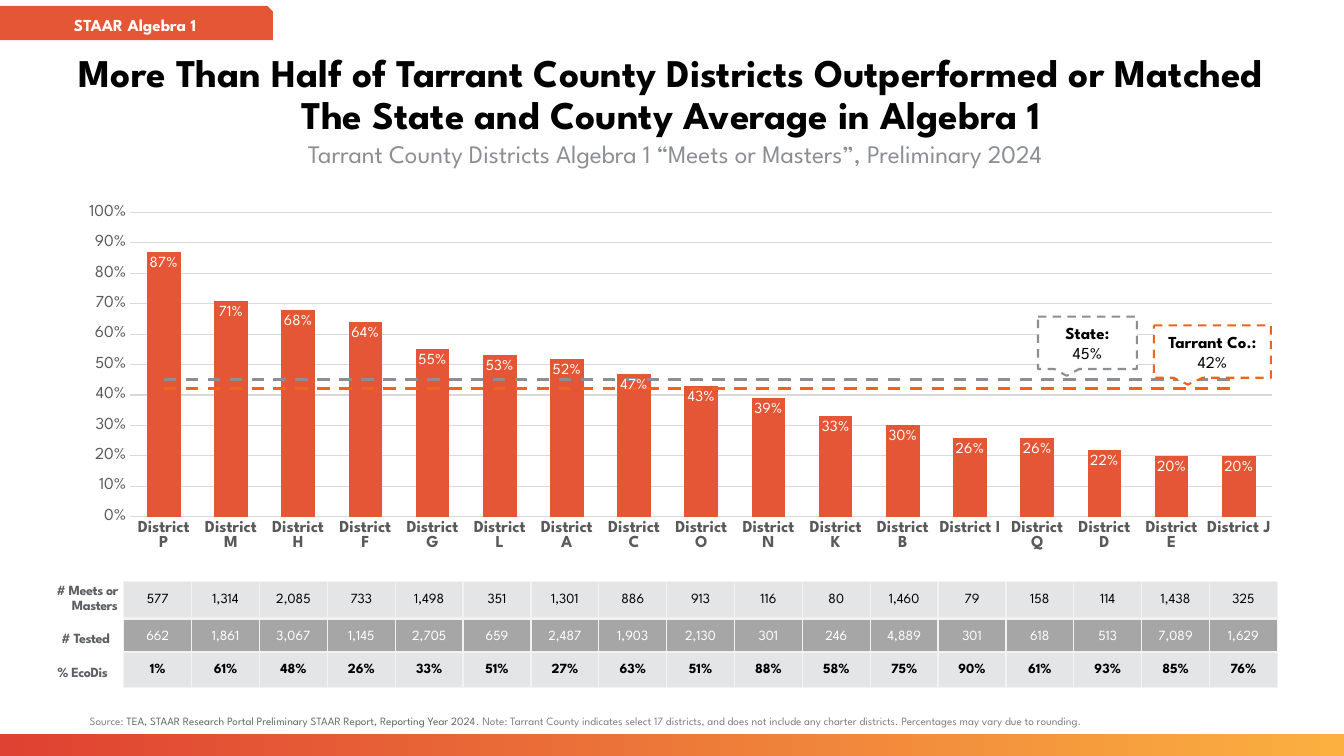
import pptx
import pptx.util
import pptx.oxml
import pptx.oxml.ns
import pptx.chart.data
import pptx.enum.chart
import pptx.enum.dml
import pptx.enum.shapes
import pptx.enum.text
from dataclasses import dataclass
from lxml import etree
from pptx.dml.color import RGBColor

Cm, Pt, qn = pptx.util.Cm, pptx.util.Pt, pptx.oxml.ns.qn
SHAPE = pptx.enum.shapes.MSO_SHAPE
ALIGN = pptx.enum.text.PP_ALIGN
ANCHOR = pptx.enum.text.MSO_ANCHOR
DASH = pptx.enum.dml.MSO_LINE.DASH


@dataclass
class Theme:
    font: str = "League Spartan"
    black: str = "000000"
    white: str = "FFFFFF"
    bar: str = "E45635"
    state: str = "8B8E93"
    county: str = "EF6418"
    axis: str = "595959"
    grid: str = "D9D9D9"
    label: str = "5C5F63"
    light: str = "E4E5E6"
    dark: str = "A6A6A6"
    border: str = "F2F2F2"
    note: str = "808080"
    source: str = "5E6E60"
    band: tuple = ("DF4132", "FBB040")
    title: int = 28
    subtitle: int = 18
    body: int = 12
    value: int = 11
    small: int = 10
    foot: int = 8


theme = Theme()


def style(font, size, color, bold=False):
    font.name, font.size, font.bold = theme.font, Pt(size), bold
    font.color.rgb = RGBColor.from_string(color)


def write(tf, paragraphs, size, align=ALIGN.CENTER, inset=0.15, spacing=None, wrap=True, anchor=ANCHOR.MIDDLE):
    tf.word_wrap, tf.vertical_anchor = wrap, anchor
    tf.margin_left = tf.margin_right = tf.margin_top = tf.margin_bottom = Cm(inset)
    for i, runs in enumerate(paragraphs):
        p = tf.paragraphs[0] if i == 0 else tf.add_paragraph()
        p.alignment, p.line_spacing = align, spacing
        for text, color, bold in runs:
            r = p.add_run()
            r.text = text
            style(r.font, size, color, bold)


prs = pptx.Presentation()
prs.slide_width, prs.slide_height = Cm(33.87), Cm(19.05)
s = prs.slides.add_slide(prs.slide_layouts[6])

band = s.shapes.add_shape(SHAPE.RECTANGLE, 0, Cm(18.49), prs.slide_width, Cm(0.56))
band.shadow.inherit = False
band.line.fill.background()
band.fill.gradient()
band.fill.gradient_angle = 0
for stop, color in zip(band.fill.gradient_stops, theme.band):
    stop.color.rgb = RGBColor.from_string(color)

title = s.shapes.add_textbox(Cm(1.6), Cm(1.27), Cm(30.61), Cm(2.29))
write(title.text_frame, [[("More Than Half of Tarrant County Districts Outperformed or Matched The State and County Average in Algebra 1", theme.black, True)]],
      theme.title, spacing=0.9)

districts = "PMHFGLACONKBIQDEJ"
scores = [87, 71, 68, 64, 55, 53, 52, 47, 43, 39, 33, 30, 26, 26, 22, 20, 20]
data = pptx.chart.data.CategoryChartData(number_format="0%")
data.categories = [f"District {letter}" for letter in districts]
data.add_series("Series 1", [score / 100 for score in scores])
data.add_series("Series 2", [0.45] * len(districts))
data.add_series("Series 3", [0.42] * len(districts))
chart = s.shapes.add_chart(pptx.enum.chart.XL_CHART_TYPE.COLUMN_CLUSTERED,
                           Cm(1.6), Cm(4.98), Cm(30.56), Cm(9.63), data).chart
chart.has_legend = chart.has_title = False
style(chart.font, theme.small, theme.black)

bars = chart.plots[0]
bars.gap_width, bars.vary_by_categories = 100, False
bars.series[0].format.fill.solid()
bars.series[0].format.fill.fore_color.rgb = RGBColor.from_string(theme.bar)
labels = bars.series[0].data_labels
labels.show_value = True
labels.number_format, labels.number_format_is_linked = "0%", False
labels.position = pptx.enum.chart.XL_LABEL_POSITION.INSIDE_END
style(labels.font, theme.value, theme.white)

bar_xml = chart.element.find(".//" + qn("c:barChart"))
plot_area = bar_xml.getparent()
C_NS = pptx.oxml.ns.nsdecls("c")
line_xml = pptx.oxml.parse_xml(
    f'<c:lineChart {C_NS}><c:grouping val="standard"/><c:varyColors val="0"/></c:lineChart>')
for ser in bar_xml.findall(qn("c:ser"))[1:]:
    for invert in ser.findall(qn("c:invertIfNegative")):
        ser.remove(invert)
    line_xml.append(ser)
etree.SubElement(line_xml, qn("c:marker")).set("val", "1")
for axis_id in bar_xml.findall(qn("c:axId")):
    etree.SubElement(line_xml, qn("c:axId")).set("val", axis_id.get("val"))
bar_xml.addnext(line_xml)
for layout in plot_area.findall(qn("c:layout")):
    plot_area.remove(layout)
plot_area.insert(0, pptx.oxml.parse_xml(
    f'<c:layout {C_NS}><c:manualLayout><c:layoutTarget val="inner"/>'
    '<c:xMode val="edge"/><c:yMode val="edge"/><c:x val="0.055"/><c:y val="0.039"/>'
    '<c:w val="0.942"/><c:h val="0.796"/></c:manualLayout></c:layout>'))

for average, color in zip(chart.plots[1].series, (theme.state, theme.county)):
    average.smooth = False
    average.marker.style = pptx.enum.chart.XL_MARKER_STYLE.NONE
    line = average.format.line
    line.color.rgb = RGBColor.from_string(color)
    line.width, line.dash_style = Pt(2.25), DASH

cat_axis, val_axis = chart.category_axis, chart.value_axis
for axis, bold in ((cat_axis, True), (val_axis, False)):
    axis.major_tick_mark = axis.minor_tick_mark = pptx.enum.chart.XL_TICK_MARK.NONE
    style(axis.tick_labels.font, theme.body, theme.axis, bold)
val_axis.minimum_scale, val_axis.maximum_scale, val_axis.major_unit = 0, 1, 0.1
val_axis.tick_labels.number_format = "0%"
val_axis.tick_labels.number_format_is_linked = False
val_axis.format.line.fill.background()
for line in (cat_axis.format.line, val_axis.major_gridlines.format.line):
    line.color.rgb = RGBColor.from_string(theme.grid)
    line.width = Pt(0.75)

subtitle = s.shapes.add_textbox(Cm(1.22), Cm(3.43), Cm(31.6), Cm(1.9))
write(subtitle.text_frame, [[("Tarrant County Districts Algebra 1 “Meets or Masters”, Preliminary 2024", theme.state, False)]],
      theme.subtitle, inset=0.13, spacing=0.9, anchor=ANCHOR.TOP)

callouts = [
    ("State:", "45%", theme.state, 26.16, 7.98, 2.49),
    ("Tarrant Co.:", "42%", theme.county, 29.08, 8.2, 2.95),
]
for name, value, color, x, y, w in callouts:
    sp = s.shapes.add_shape(SHAPE.RECTANGULAR_CALLOUT, Cm(x), Cm(y), Cm(w), Cm(1.32))
    sp.shadow.inherit = False
    sp.adjustments[0], sp.adjustments[1] = -0.21, 0.63
    sp.fill.solid()
    sp.fill.fore_color.rgb = RGBColor.from_string(theme.white)
    sp.line.color.rgb = RGBColor.from_string(color)
    sp.line.width, sp.line.dash_style = Pt(1.5), DASH
    write(sp.text_frame, [[(name, theme.black, True)], [(value, theme.black, False)]], theme.body)

tag = s.shapes.add_shape(SHAPE.SNIP_1_RECTANGLE, 0, Cm(0.15), Cm(6.88), Cm(0.86))
tag.shadow.inherit = False
tag.fill.solid()
tag.fill.fore_color.rgb = RGBColor.from_string(theme.bar)
tag.line.fill.background()
write(tag.text_frame, [[("STAAR Algebra 1", theme.white, True)]], theme.body)

row_labels = [
    ("# Meets or Masters", 0.81, 14.55, 2.31, 1.07, ALIGN.RIGHT, True),
    ("# Tested", 1.4, 15.77, 1.65, 0.66, ALIGN.LEFT, False),
    ("% EcoDis", 1.3, 16.64, 1.83, 0.66, ALIGN.LEFT, False),
]
for text, x, y, w, h, align, wrap in row_labels:
    tf = s.shapes.add_textbox(Cm(x), Cm(y), Cm(w), Cm(h)).text_frame
    write(tf, [[(text, theme.label, True)]], theme.small, align, spacing=0.9, wrap=wrap)
    tf.paragraphs[0].runs[0].font._element.set("spc", "-30")

tables = [
    (14.66, theme.light, theme.black, False,
     "577 1,314 2,085 733 1,498 351 1,301 886 913 116 80 1,460 79 158 114 1,438 325"),
    (15.6, theme.dark, theme.white, False,
     "662 1,861 3,067 1,145 2,705 659 2,487 1,903 2,130 301 246 4,889 301 618 513 7,089 1,629"),
    (16.43, theme.light, theme.black, True,
     "1% 61% 48% 26% 33% 51% 27% 63% 51% 88% 58% 75% 90% 61% 93% 85% 76%"),
]
for y, fill, color, bold, values in tables:
    table = s.shapes.add_table(1, len(districts), Cm(3.12), Cm(y), Cm(29.07), Cm(0.89)).table
    table.first_row = table.horz_banding = False
    for column, cell, value in zip(table.columns, table.iter_cells(), values.split()):
        column.width = Cm(1.71)
        write(cell.text_frame, [[(value, color, bold)]], theme.small)
        cell.vertical_anchor = ANCHOR.MIDDLE
        cell.margin_left = cell.margin_right = cell.margin_top = Cm(0.03)
        cell.margin_bottom = 0
        tcPr = cell._tc.get_or_add_tcPr()
        for side in ("a:lnL", "a:lnR", "a:lnT", "a:lnB"):
            ln = etree.SubElement(tcPr, qn(side), w=str(Pt(1)))
            solid = etree.SubElement(ln, qn("a:solidFill"))
            etree.SubElement(solid, qn("a:srgbClr"), val=theme.border)
        cell.fill.solid()
        cell.fill.fore_color.rgb = RGBColor.from_string(fill)

footer = s.shapes.add_textbox(Cm(2.01), Cm(17.65), Cm(30.2), Cm(1.02))
write(footer.text_frame, [[
    ("Source: ", theme.note, False),
    ("TEA, STAAR Research Portal Preliminary STAAR Report, Reporting Year 2024", theme.source, False),
    (". Note: Tarrant County indicates select 17 districts, and does not include any charter districts. Percentages may vary due to rounding.", theme.note, False),
]], theme.foot, ALIGN.LEFT, inset=0.25)

prs.save("out.pptx")
